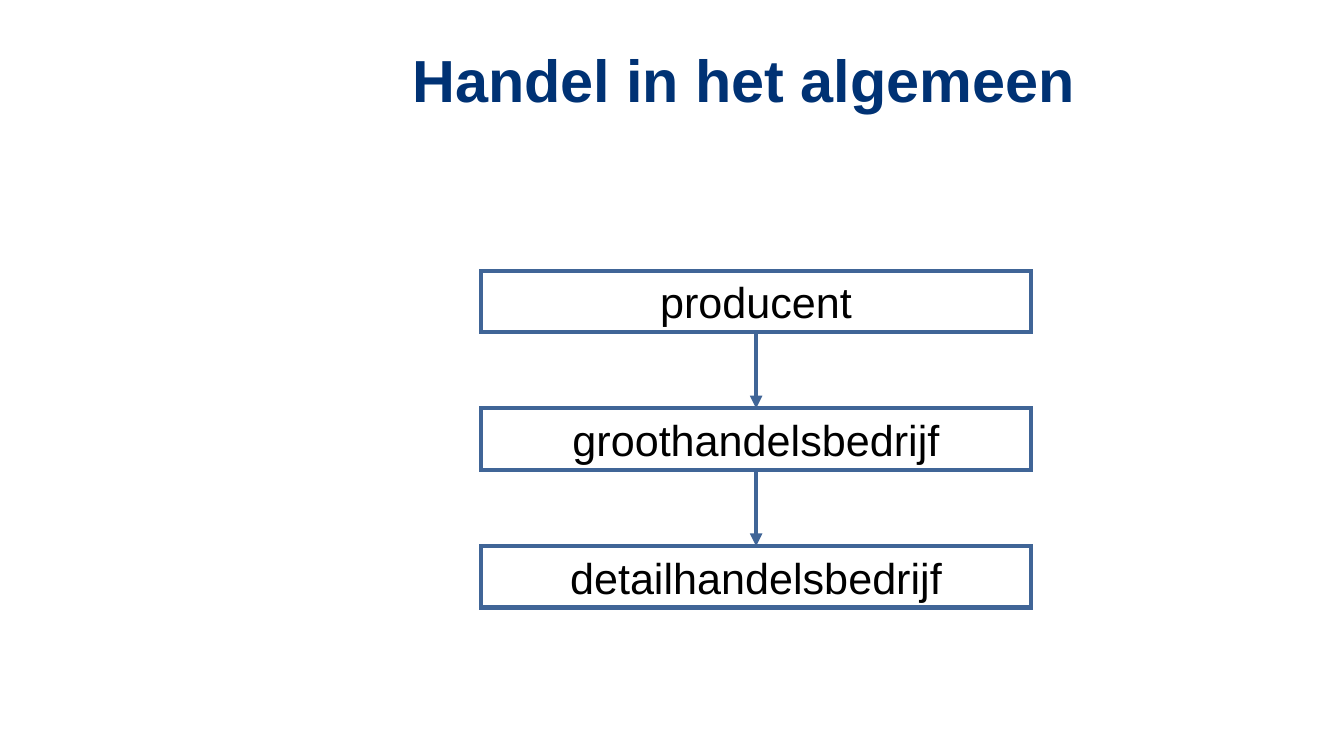
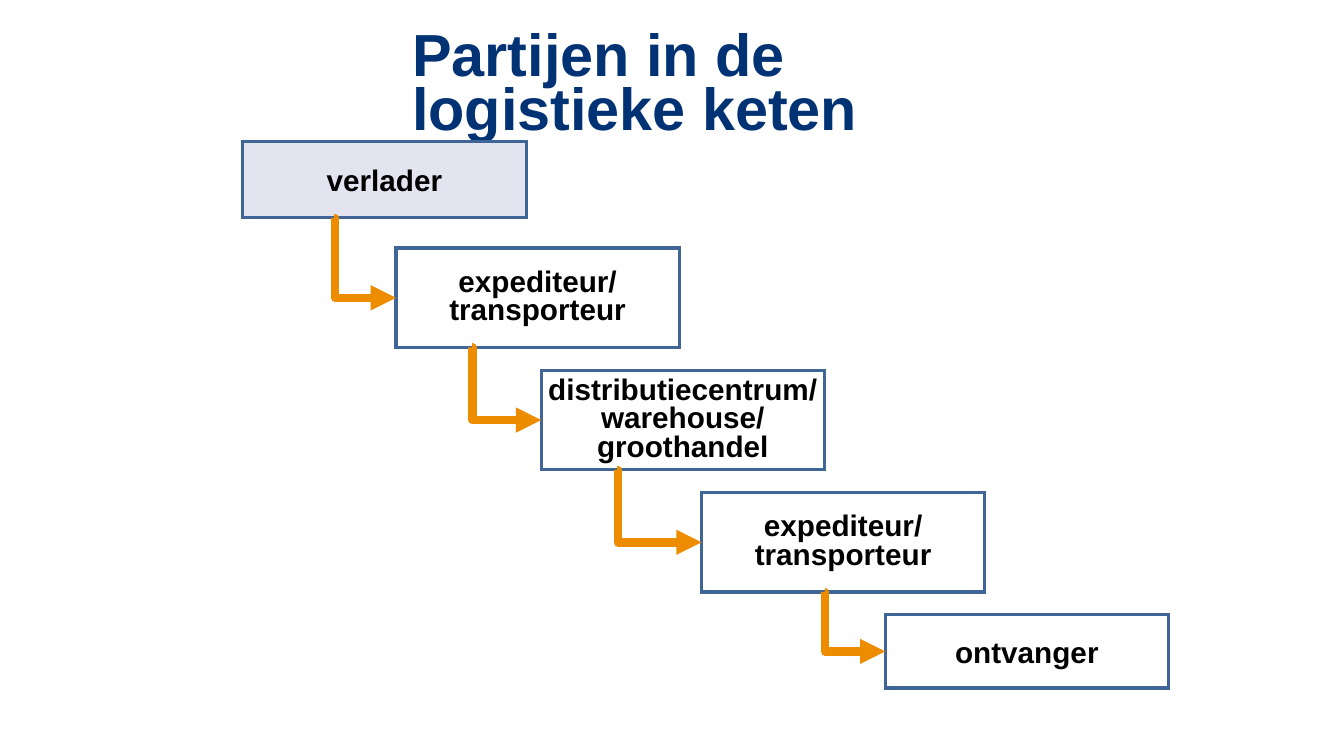
import pptx
import pptx.util
import pptx.dml.color
import pptx.enum.shapes
import pptx.enum.text
import pptx.oxml
import pptx.oxml.ns
from dataclasses import dataclass

Cm, Pt = pptx.util.Cm, pptx.util.Pt
RGB = pptx.dml.color.RGBColor.from_string
ALIGN = pptx.enum.text.PP_ALIGN
ANCHOR = pptx.enum.text.MSO_ANCHOR
CONNECTOR = pptx.enum.shapes.MSO_CONNECTOR

TRADE_TITLE = "Handel in het algemeen"
TRADE_STEPS = ["producent", "groothandelsbedrijf", "detailhandelsbedrijf"]

CHAIN_TITLE = "Partijen in de\vlogistieke keten"
CHAIN_STEPS = [
    {"text": "verlader", "left": 6.12, "height": 1.93, "exit": 2.31},
    {"text": "expediteur/\vtransporteur", "left": 9.98, "height": 2.51, "exit": 1.91},
    {"text": "distributiecentrum/\nwarehouse/\ngroothandel", "left": 13.64,
     "height": 2.51, "exit": 1.91},
    {"text": "expediteur/\vtransporteur", "left": 17.68, "height": 2.51, "exit": 3.1},
    {"text": "ontvanger", "left": 22.31, "height": 1.85, "exit": None},
]


@dataclass(frozen=True)
class Theme:
    font: str = "Arial"
    title: str = "003274"
    text: str = "000000"
    border: str = "406597"
    arrow: str = "EE8C00"
    highlight: str = "E4E4F0"
    title_size: float = 42.4
    trade_size: float = 30.8
    chain_size: float = 21.2
    trade_line: float = 3
    chain_line: float = 2.25
    arrow_line: float = 6


T = Theme()


def set_all(obj, values):
    for name, value in values.items():
        setattr(obj, name, value)


def add_xml(parent, tag, **attributes):
    parent.append(parent.makeelement(pptx.oxml.ns.qn(tag), attributes))


def format_text(tf, size, color, bold, align, spacing):
    for p in tf.paragraphs:
        set_all(p, {"alignment": align, "line_spacing": spacing})
        for r in p.runs:
            set_all(r.font, {"name": T.font, "size": Pt(size), "bold": bold})
            r.font.color.rgb = RGB(color)


def add_slide(prs, title, top, spacing=1.0):
    s = prs.slides.add_slide(prs.slide_layouts[5])
    sp = s.shapes.title
    set_all(sp, {"left": Cm(10.39), "top": Cm(top), "width": Cm(17.55), "height": Cm(3.05)})
    tf = sp.text_frame
    tf.text = title
    set_all(tf, {"margin_left": 0, "margin_right": 0, "margin_top": 0,
                 "margin_bottom": 0, "vertical_anchor": ANCHOR.TOP, "word_wrap": True,
                 "auto_size": pptx.enum.text.MSO_AUTO_SIZE.NONE})
    format_text(tf, T.title_size, T.title, True, ALIGN.LEFT, spacing)
    return s


def add_box(s, text, left, top, width, height, size, line, bold=False, fill=None):
    sp = s.shapes.add_shape(pptx.enum.shapes.MSO_SHAPE.RECTANGLE,
                            Cm(left), Cm(top), Cm(width), Cm(height))
    sp.shadow.inherit = False
    if fill:
        sp.fill.solid()
        sp.fill.fore_color.rgb = RGB(fill)
    else:
        sp.fill.background()
    sp.line.color.rgb = RGB(T.border)
    sp.line.width = Pt(line)
    add_xml(sp._element.spPr.find(pptx.oxml.ns.qn("a:ln")), "a:miter", lim="800000")
    tf = sp.text_frame
    tf.text = text
    set_all(tf, {"word_wrap": False, "vertical_anchor": ANCHOR.MIDDLE})
    spacing = 0.8 if len(text.splitlines()) > 1 else 1.0
    format_text(tf, size, T.text, bold, ALIGN.CENTER, spacing)


def add_arrow(s, kind, start, end, color, width):
    cx = s.shapes.add_connector(kind, *map(Cm, start + end))
    cx.line.color.rgb = RGB(color)
    cx.line.width = Pt(width)
    pr = cx._element.spPr
    qn = pptx.oxml.ns.qn
    add_xml(pr.find(qn("a:ln")), "a:tailEnd", type="triangle")
    add_xml(pr, "a:effectLst")
    if kind == CONNECTOR.ELBOW:
        guides = pr.find(qn("a:prstGeom")).find(qn("a:avLst"))
        add_xml(guides, "a:gd", name="adj1", fmla="val 1000")


def build_trade(prs):
    s = add_slide(prs, TRADE_TITLE, 1.09)
    left, top, width, height, pitch = 12.12, 6.82, 13.87, 1.55, 3.47
    tops = [top + i * pitch for i in range(len(TRADE_STEPS))]
    for text, y in zip(TRADE_STEPS, tops):
        add_box(s, text, left, y, width, height, T.trade_size, T.trade_line)
    middle = left + width / 2
    for y, following in zip(tops, tops[1:]):
        add_arrow(s, CONNECTOR.STRAIGHT, (middle, y + height), (middle, following),
                  T.border, T.trade_line)


def build_chain(prs):
    s = add_slide(prs, CHAIN_TITLE, 0.86, 0.75)
    width, first_top, second_top, pitch = 7.14, 3.56, 6.25, 3.08
    tops = [first_top] + [second_top + i * pitch for i in range(len(CHAIN_STEPS) - 1)]
    for i, (step, y) in enumerate(zip(CHAIN_STEPS, tops)):
        add_box(s, step["text"], step["left"], y, width, step["height"], T.chain_size,
                T.chain_line, bold=True, fill=T.highlight if i == 0 else None)
    placed = list(zip(CHAIN_STEPS, tops))
    for (step, y), (target, target_y) in zip(placed, placed[1:]):
        add_arrow(s, CONNECTOR.ELBOW,
                  (step["left"] + step["exit"], y + step["height"]),
                  (target["left"], target_y + target["height"] / 2),
                  T.arrow, T.arrow_line)


def main():
    prs = pptx.Presentation()
    set_all(prs, {"slide_width": Cm(33.87), "slide_height": Cm(19.05)})
    build_trade(prs)
    build_chain(prs)
    prs.save("out.pptx")


if __name__ == "__main__":
    main()
